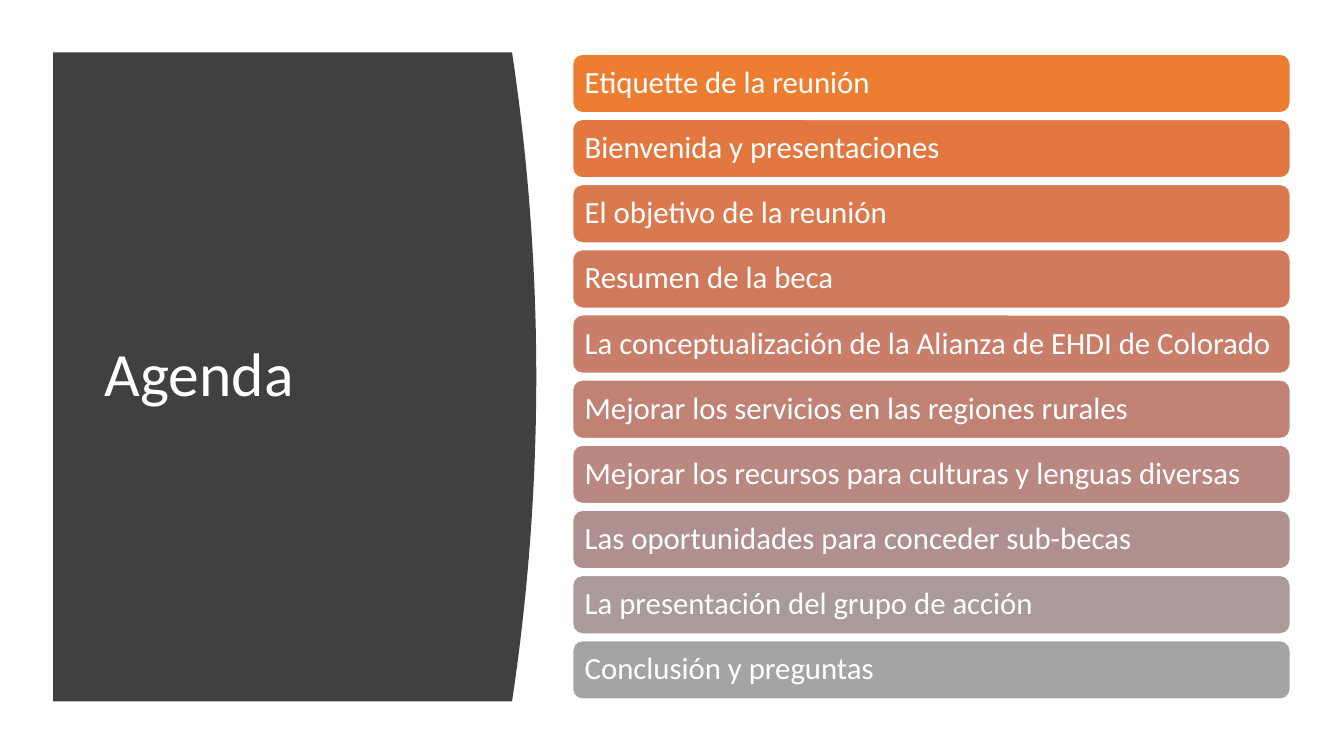
from pptx import Presentation
from pptx.dml.color import RGBColor
from pptx.enum.shapes import MSO_SHAPE
from pptx.enum.text import MSO_ANCHOR, MSO_AUTO_SIZE, PP_ALIGN
from pptx.util import Pt

FONT = "Calibri"
WHITE = "FFFFFF"
AGENDA = [
    ("Etiquette de la reunión", "ED7D31"),
    ("Bienvenida y presentaciones", "E2783F"),
    ("El objetivo de la reunión", "D9794D"),
    ("Resumen de la beca", "D07A5B"),
    ("La conceptualización de la Alianza de EHDI de Colorado", "C87E68"),
    ("Mejorar los servicios en las regiones rurales", "BF8275"),
    ("Mejorar los recursos para culturas y lenguas diversas", "B88881"),
    ("Las oportunidades para conceder sub-becas", "B0908E"),
    ("La presentación del grupo de acción", "AA9A99"),
    ("Conclusión y preguntas", "A4A4A4"),
]
BAR_LEFT, BAR_TOP, BAR_WIDTH, BAR_HEIGHT = 409, 38.7, 512.6, 41.8
BAR_PITCH = 46.54

PANEL_LEFT, PANEL_TOP, PANEL_BOTTOM = 38, 37.4, 501.1
PANEL_RIGHT, PANEL_BULGE = 365.8, 17.3
CURVE_STEPS = 40


def color(hex_string):
    return RGBColor.from_string(hex_string)


def write_text(shape, text, size):
    """Put one white, left-aligned, vertically centred line in a shape."""
    frame = shape.text_frame
    frame.text = text
    frame.word_wrap = True
    frame.auto_size = MSO_AUTO_SIZE.NONE
    frame.vertical_anchor = MSO_ANCHOR.MIDDLE
    paragraph = frame.paragraphs[0]
    paragraph.alignment = PP_ALIGN.LEFT
    paragraph.line_spacing = 0.9
    font = paragraph.runs[0].font
    font.name = FONT
    font.size = Pt(size)
    font.color.rgb = color(WHITE)


def add_panel(slide):
    """Draw the dark panel whose right side bulges as a parabola."""
    curve = []
    for step in range(CURVE_STEPS + 1):
        share = step / CURVE_STEPS
        x = PANEL_RIGHT + PANEL_BULGE * (1 - (2 * share - 1) ** 2)
        y = PANEL_TOP + share * (PANEL_BOTTOM - PANEL_TOP)
        curve.append((Pt(x), Pt(y)))
    builder = slide.shapes.build_freeform(Pt(PANEL_LEFT), Pt(PANEL_TOP))
    builder.add_line_segments(curve + [(Pt(PANEL_LEFT), Pt(PANEL_BOTTOM))])
    panel = builder.convert_to_shape()
    panel.shadow.inherit = False
    panel.fill.solid()
    panel.fill.fore_color.rgb = color("404040")
    panel.line.fill.background()
    # Index 2 is the back of the shape tree, so the title stays in front.
    slide.shapes._spTree.insert(2, panel._element)


def set_title(slide, text):
    title = slide.shapes.title
    title.left, title.top = Pt(67.7), Pt(80)
    title.width, title.height = Pt(269.3), Pt(377.3)
    write_text(title, text, 44)


def add_bar(slide, top, text, fill):
    bar = slide.shapes.add_shape(
        MSO_SHAPE.ROUNDED_RECTANGLE,
        Pt(BAR_LEFT), Pt(top), Pt(BAR_WIDTH), Pt(BAR_HEIGHT),
    )
    bar.shadow.inherit = False
    bar.fill.solid()
    bar.fill.fore_color.rgb = color(fill)
    bar.line.color.rgb = color(WHITE)
    bar.line.width = Pt(1)
    frame = bar.text_frame
    frame.margin_left = frame.margin_right = Pt(6.6)
    frame.margin_top = frame.margin_bottom = Pt(6.6)
    write_text(bar, text, 22)


def main():
    presentation = Presentation()
    presentation.slide_width, presentation.slide_height = Pt(960), Pt(540)
    slide = presentation.slides.add_slide(presentation.slide_layouts[5])
    add_panel(slide)
    set_title(slide, "Agenda")
    for index, (text, fill) in enumerate(AGENDA):
        add_bar(slide, BAR_TOP + index * BAR_PITCH, text, fill)
    presentation.save("out.pptx")


if __name__ == "__main__":
    main()
